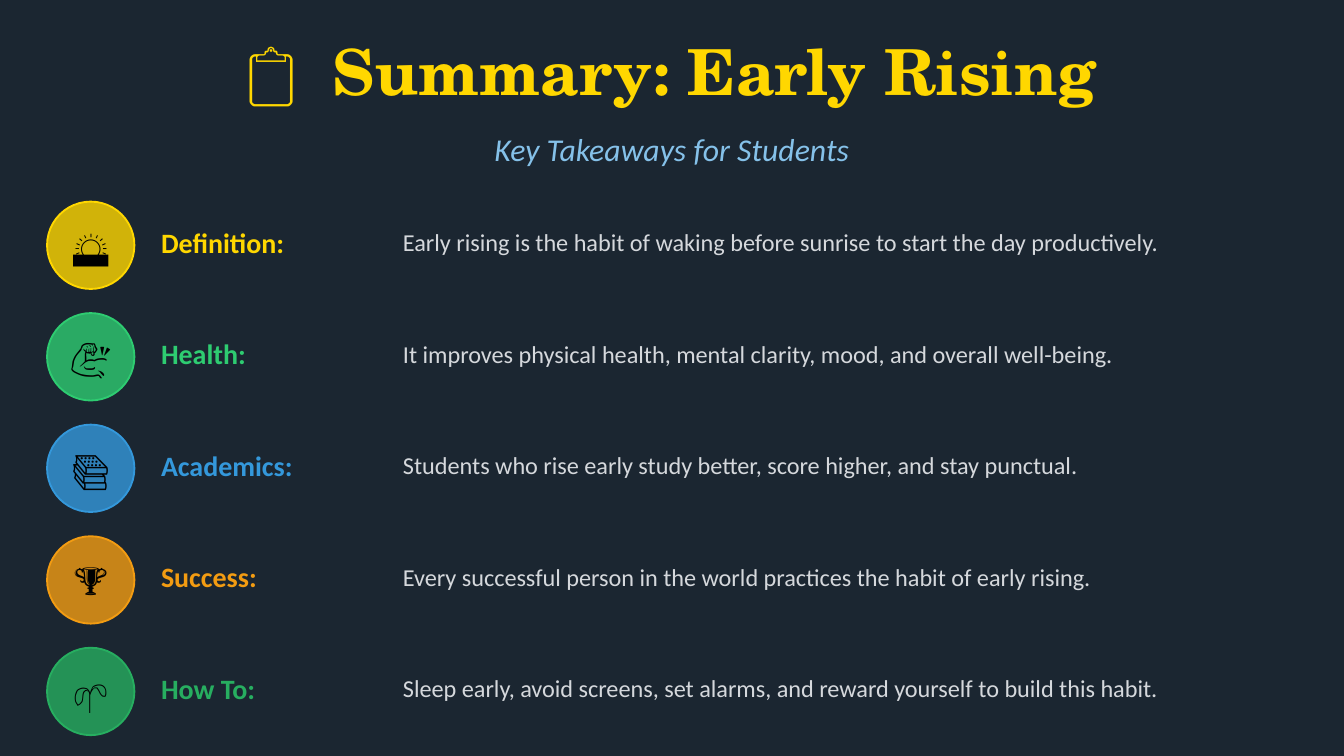
from pptx import Presentation
from pptx.dml.color import RGBColor
from pptx.enum.shapes import MSO_SHAPE as Shape
from pptx.enum.text import MSO_ANCHOR as Anchor, PP_ALIGN as Align
from pptx.oxml.ns import qn
from pptx.util import Pt
from lxml.etree import SubElement

EMU_PER_PX = 4572  # 200 px to the inch
COLORS = {
    "night": "1B2631", "gold": "FFD700", "sky": "85C1E9", "mist": "D5D8DC",
    "black": "000000", "green": "2ECC71", "blue": "3498DB",
    "orange": "F39C12", "leaf": "27AE60",
}
TITLE_FONT, BODY_FONT = "TeX Gyre Schola", "Calibri"
FIRST_ROW_TOP, ROW_STEP = 300, 166
TAKEAWAYS = [
    ("🌅", "Definition:", "gold",
     "Early rising is the habit of waking before sunrise to start the day productively."),
    ("💪", "Health:", "green",
     "It improves physical health, mental clarity, mood, and overall well-being."),
    ("📚", "Academics:", "blue",
     "Students who rise early study better, score higher, and stay punctual."),
    ("🏆", "Success:", "orange",
     "Every successful person in the world practices the habit of early rising."),
    ("🌱", "How To:", "leaf",
     "Sleep early, avoid screens, set alarms, and reward yourself to build this habit."),
]


def px(*lengths):
    return [length * EMU_PER_PX for length in lengths]


def rgb(name):
    return RGBColor.from_string(COLORS[name])


def style_span(span, size, color, font=BODY_FONT, bold=False, italic=False):
    span.font.size = Pt(size)
    span.font.name = font
    span.font.bold = bold
    span.font.italic = italic
    span.font.color.rgb = rgb(color)


def add_text(page, frame, text, size, color, align=Align.LEFT, **style):
    box = page.shapes.add_textbox(*px(*frame))
    box.text_frame.word_wrap = True
    box.text_frame.vertical_anchor = Anchor.MIDDLE
    box.text_frame.text = text
    para = box.text_frame.paragraphs[0]
    para.alignment = align
    style_span(para.runs[0], size, color, **style)
    return para


def add_title(page):
    """Add the heading, with letter spacing to set its icon apart."""
    style = {"size": 34, "color": "gold", "font": TITLE_FONT, "bold": True}
    para = add_text(page, (60, 20, 1880, 170), "📋 ", align=Align.CENTER, **style)
    para.runs[0].font._element.set("spc", "520")
    heading = para.add_run()
    heading.text = "Summary: Early Rising"
    style_span(heading, **style)


def add_badge(page, frame, icon, color):
    """Add a translucent circle with an icon on it."""
    circle = page.shapes.add_shape(Shape.OVAL, *px(*frame))
    circle.shadow.inherit = False
    circle.fill.solid()
    circle.fill.fore_color.rgb = rgb(color)
    fill_color = circle._element.spPr.find(qn("a:solidFill"))[0]
    SubElement(fill_color, qn("a:alpha")).set("val", "80000")
    circle.line.color.rgb = rgb(color)
    circle.line.width = Pt(1)
    add_text(page, frame, icon, 20, "black", Align.CENTER)


def add_takeaway(page, top, icon, label, color, sentence):
    add_badge(page, (70, top, 130, 130), icon, color)
    add_text(page, (220, top + 10, 360, 100), label, 15, color, bold=True)
    add_text(page, (580, top + 10, 1360, 100), sentence, 13, "mist")


def main():
    deck = Presentation()
    deck.slide_width, deck.slide_height = px(2000, 1125)
    page = deck.slides.add_slide(deck.slide_layouts[6])
    page.background.fill.solid()
    page.background.fill.fore_color.rgb = rgb("night")

    add_title(page)
    add_text(page, (60, 176, 1880, 90), "Key Takeaways for Students", 17, "sky",
             Align.CENTER, italic=True)
    for row, takeaway in enumerate(TAKEAWAYS):
        add_takeaway(page, FIRST_ROW_TOP + row * ROW_STEP, *takeaway)
    deck.save("out.pptx")


if __name__ == "__main__":
    main()
